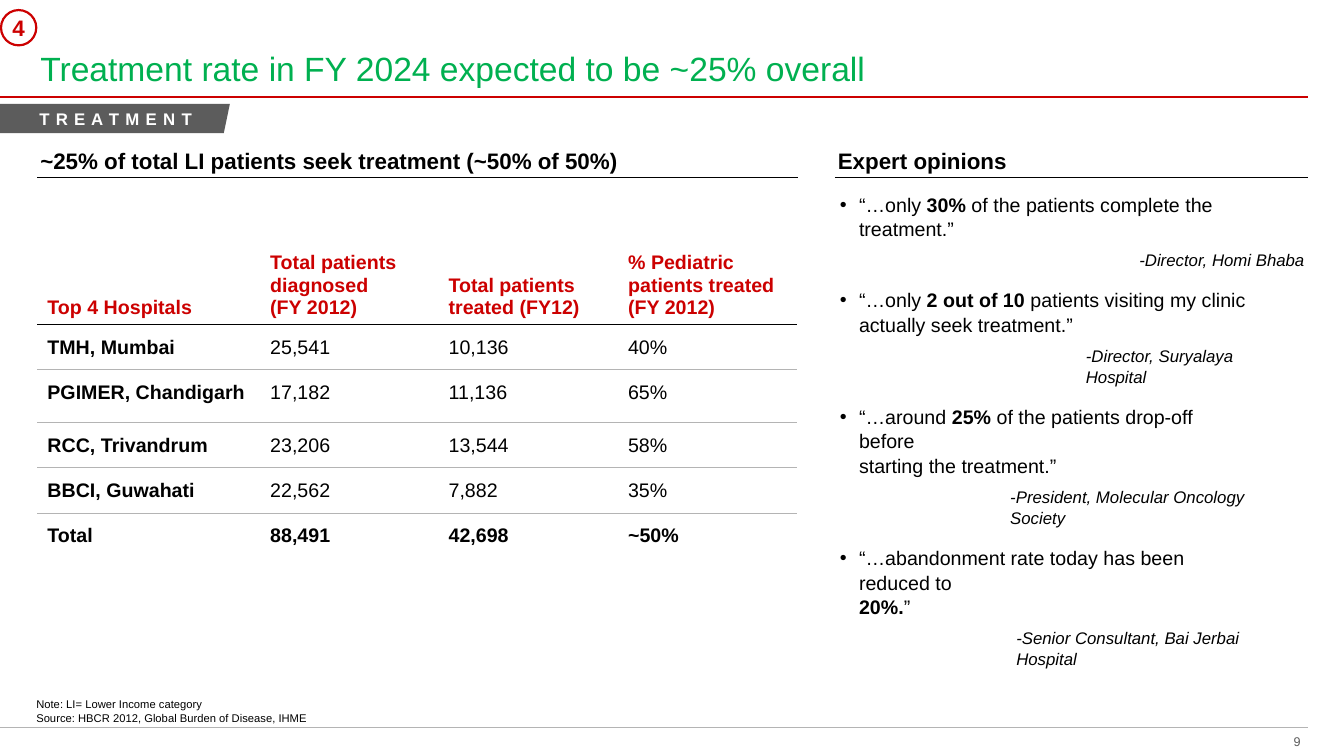
"""Build the treatment rate slide: hospital table on the left, expert opinions on the right."""
import dataclasses

import lxml.etree
import pptx
import pptx.dml.color
import pptx.enum.shapes
import pptx.enum.text
import pptx.oxml.ns
import pptx.util

TITLE = "Treatment rate in FY 2024 expected to be ~25% overall"
SECTION = "T R E A T M E N T"
STEP = "4"
PAGE_NUMBER = "9"
TABLE_HEADING = "~25% of total LI patients seek treatment (~50% of 50%)"
QUOTES_HEADING = "Expert opinions"
FOOTNOTES = "Note: LI= Lower Income category\nSource: HBCR 2012, Global Burden of Disease, IHME"
HOSPITALS = [
    ("", "Total patients\ndiagnosed", "Total patients", "% Pediatric\npatients treated"),
    ("Top 4 Hospitals", "(FY 2012)", "treated (FY12)", "(FY 2012)"),
    ("TMH, Mumbai", "25,541", "10,136", "40%"),
    ("PGIMER, Chandigarh", "17,182", "11,136", "65%"),
    ("RCC, Trivandrum", "23,206", "13,544", "58%"),
    ("BBCI, Guwahati", "22,562", "7,882", "35%"),
    ("Total", "88,491", "42,698", "~50%"),
]
QUOTES = [
    (["“…only *30%* of the patients complete the", "treatment.”"],
     "-Director, Homi Bhaba", 2.99),
    (["“…only *2 out of 10* patients visiting my clinic", "actually seek treatment.”"],
     "-Director, Suryalaya\vHospital", 2.46),
    (["“…around *25%* of the patients drop-off", "before", "starting the treatment.”"],
     "-President, Molecular Oncology\vSociety", 1.71),
    (["“…abandonment rate today has been", "reduced to", "*20%.*”"],
     "-Senior Consultant, Bai Jerbai\vHospital", 1.77),
]

WIDTH, HEIGHT = 13.33, 7.5
LEFT, LEFT_END = 0.37, 7.91
RIGHT, RIGHT_END = 8.28, 12.97
HEADING_TOP, HEADING_RULE = 1.44, 1.76
TABLE_TOP = 2.48
COLUMN_WIDTHS = [2.18, 1.64, 1.8, 1.92]
COLUMN_INDENTS = [0.1, 0.13, 0.26, 0.24]
ROW_HEIGHTS = [0.46, 0.28, 0.45, 0.52, 0.45, 0.45, 0.36]
HEADER_ROWS = 2

Inches, Pt = pptx.util.Inches, pptx.util.Pt
ANCHOR = pptx.enum.text.MSO_ANCHOR
ALIGN = pptx.enum.text.PP_ALIGN
SHAPE = pptx.enum.shapes.MSO_SHAPE


@dataclasses.dataclass(frozen=True)
class Theme:
    """Colours, font and type sizes of the slide."""
    font: str = "Arial"
    green: str = "00B050"
    red: str = "CC0000"
    black: str = "000000"
    white: str = "FFFFFF"
    dark: str = "5C5C5C"
    grey: str = "B4B4B4"
    title: int = 24
    heading: int = 16
    body: int = 14
    small: int = 12
    page: int = 9
    note: int = 8


THEME = Theme()


def rgb(color):
    """Turn a hex string into a colour."""
    return pptx.dml.color.RGBColor.from_string(color)


def style(span, size, color=THEME.black, bold=False, italic=False):
    """Format one run."""
    span.font.name, span.font.size = THEME.font, Pt(size)
    span.font.color.rgb = rgb(color)
    span.font.bold, span.font.italic = bold, italic


def fill_frame(frame, text, size, color=THEME.black, bold=False):
    """Put text without margins into a frame and format its runs."""
    frame.margin_left = frame.margin_right = frame.margin_top = frame.margin_bottom = 0
    frame.text = text
    for para in frame.paragraphs:
        for span in para.runs:
            style(span, size, color, bold)


def place(shape, left, top, width, height):
    """Move and size a shape."""
    shape.left, shape.top = Inches(left), Inches(top)
    shape.width, shape.height = Inches(width), Inches(height)


def add_label(page, left, top, width, height, text, size, **look):
    """Add a text box."""
    box = page.shapes.add_textbox(Inches(left), Inches(top), Inches(width), Inches(height))
    fill_frame(box.text_frame, text, size, **look)
    return box


def add_rule(page, left, right, top, color, weight):
    """Add a horizontal line."""
    rule = page.shapes.add_connector(pptx.enum.shapes.MSO_CONNECTOR.STRAIGHT,
                                     Inches(left), Inches(top), Inches(right), Inches(top))
    rule.line.color.rgb, rule.line.width = rgb(color), Pt(weight)
    lxml.etree.SubElement(rule._element.spPr, pptx.oxml.ns.qn("a:effectLst"))


def underline_cell(cell, color, weight):
    """Draw the bottom border of a cell."""
    border = pptx.oxml.parse_xml(
        f'<a:lnB {pptx.oxml.ns.nsdecls("a")} w="{Pt(weight)}"><a:solidFill>'
        f'<a:srgbClr val="{color}"/></a:solidFill></a:lnB>')
    cell._tc.get_or_add_tcPr().insert(0, border)


def add_hospital_table(page):
    """Add the table of patients by hospital."""
    table = page.shapes.add_table(
        len(HOSPITALS), len(COLUMN_WIDTHS), Inches(LEFT), Inches(TABLE_TOP),
        Inches(sum(COLUMN_WIDTHS)), Inches(sum(ROW_HEIGHTS))).table
    table.first_row = table.horz_banding = False
    style_id = table._tbl.tblPr.find(pptx.oxml.ns.qn("a:tableStyleId"))
    style_id.text = "{2D5ABB26-0587-4C30-8999-92F81FD0307C}"
    for column, width in zip(table.columns, COLUMN_WIDTHS):
        column.width = Inches(width)
    last = len(HOSPITALS) - 1
    for row, values in enumerate(HOSPITALS):
        table.rows[row].height = Inches(ROW_HEIGHTS[row])
        header = row < HEADER_ROWS
        for column, value in enumerate(values):
            cell = table.cell(row, column)
            fill_frame(cell.text_frame, value, THEME.body,
                       THEME.red if header else THEME.black,
                       header or row == last or column == 0)
            cell.margin_left = Inches(COLUMN_INDENTS[column])
            cell.margin_right = cell.margin_bottom = 0
            cell.margin_top = 0 if header else Inches(0.12)
            cell.vertical_anchor = ANCHOR.BOTTOM if row == 0 else ANCHOR.TOP
            cell.fill.background()
            if header:
                for para in cell.text_frame.paragraphs:
                    para.line_spacing = Pt(16)
            if row == HEADER_ROWS - 1:
                underline_cell(cell, THEME.black, 1.5)
            elif HEADER_ROWS <= row < last:
                underline_cell(cell, THEME.grey, 0.75)


def format_paragraph(para, left, hanging, before, bullet):
    """Set indent, spacing and bullet of a paragraph."""
    properties = para._p.get_or_add_pPr()
    properties.set("marL", str(Inches(left)))
    properties.set("indent", str(Inches(-hanging)))
    mark = lxml.etree.SubElement(properties, pptx.oxml.ns.qn("a:buChar" if bullet else "a:buNone"))
    if bullet:
        mark.set("char", "•")
    para.alignment = ALIGN.LEFT
    para.line_spacing, para.space_before, para.space_after = 1.04, Pt(before), Pt(0)


def fill_quotes(box):
    """Write the expert quotes and their speakers."""
    place(box, RIGHT + 0.03, 1.9, 4.64, 4.7)
    frame = box.text_frame
    fill_frame(frame, "", THEME.body)
    frame.word_wrap, frame.auto_size = True, pptx.enum.text.MSO_AUTO_SIZE.NONE
    for number, (lines, speaker, indent) in enumerate(QUOTES):
        para = frame.add_paragraph() if number else frame.paragraphs[0]
        format_paragraph(para, 0.21, 0.19, 12.5 if number else 0, True)
        for index, line in enumerate(lines):
            if index:
                para.add_line_break()
            for part, text in enumerate(line.split("*")):
                if text:
                    span = para.add_run()
                    span.text = text
                    style(span, THEME.body, bold=part % 2 == 1)
        para = frame.add_paragraph()
        para.text = speaker
        format_paragraph(para, indent, 0, 6, False)
        for span in para.runs:
            style(span, THEME.small, italic=True)


def add_section_tag(page):
    """Add the slanted section tag."""
    outline = page.shapes.build_freeform(Inches(2.28), Inches(1.03), scale=1.0)
    corners = [(0, 1.03), (0, 1.32), (2.22, 1.32)]
    outline.add_line_segments([(Inches(x), Inches(y)) for x, y in corners], close=True)
    tag = outline.convert_to_shape()
    tag.shadow.inherit = False
    tag.fill.solid()
    tag.fill.fore_color.rgb = rgb(THEME.dark)
    tag.line.fill.background()
    label = add_label(page, 0.39, 1.08, 1.6, 0.2, SECTION, THEME.small, color=THEME.white, bold=True)
    label.text_frame.paragraphs[0].runs[0]._r.get_or_add_rPr().set("spc", "60")


def add_step_circle(page):
    """Add the numbered circle in the corner."""
    circle = page.shapes.add_shape(SHAPE.OVAL, Inches(0.01), Inches(0.1), Inches(0.35), Inches(0.35))
    circle.shadow.inherit = False
    circle.fill.background()
    circle.line.color.rgb, circle.line.width = rgb(THEME.red), Pt(1.56)
    fill_frame(circle.text_frame, STEP, THEME.heading, THEME.red, True)
    circle.text_frame.word_wrap = False
    circle.text_frame.vertical_anchor = ANCHOR.MIDDLE
    circle.text_frame.paragraphs[0].alignment = ALIGN.CENTER


def main():
    """Compose and save the slide."""
    deck = pptx.Presentation()
    deck.slide_width, deck.slide_height = Inches(WIDTH), Inches(HEIGHT)
    page = deck.slides.add_slide(deck.slide_layouts[1])
    title = page.shapes.title
    place(title, 0.4, 0.48, 8.5, 0.43)
    fill_frame(title.text_frame, TITLE, THEME.title, THEME.green)
    title.text_frame.auto_size = pptx.enum.text.MSO_AUTO_SIZE.NONE
    title.text_frame.vertical_anchor = ANCHOR.TOP
    title.text_frame.paragraphs[0].alignment = ALIGN.LEFT
    fill_quotes(page.placeholders[1])
    add_rule(page, 0, RIGHT_END, 7.22, THEME.grey, 0.72)
    add_rule(page, 0, RIGHT_END, 0.96, THEME.red, 1.56)
    for text, left, right in [(TABLE_HEADING, LEFT, LEFT_END), (QUOTES_HEADING, RIGHT, RIGHT_END)]:
        add_label(page, left + 0.03, HEADING_TOP + 0.02, right - left, 0.29, text, THEME.heading, bold=True)
        add_rule(page, left, right, HEADING_RULE, THEME.black, 0.72)
    add_hospital_table(page)
    add_section_tag(page)
    add_step_circle(page)
    notes = add_label(page, 0.36, 6.91, 2.72, 0.29, FOOTNOTES, THEME.note)
    for para in notes.text_frame.paragraphs:
        para.line_spacing = Pt(10)
    add_label(page, 12.83, 7.28, 0.17, 0.17, PAGE_NUMBER, THEME.page, color=THEME.dark)
    deck.save("out.pptx")


if __name__ == "__main__":
    main()
